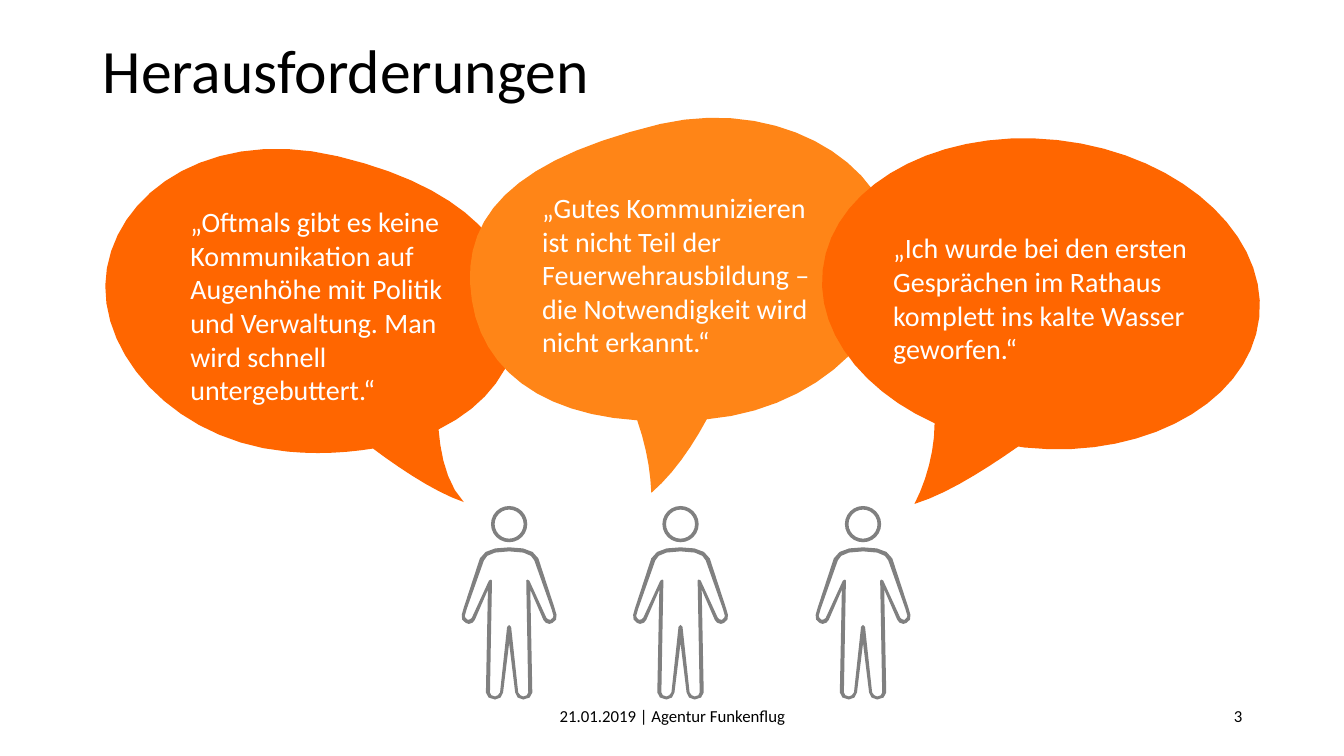
import math

import pptx
import pptx.dml.color
import pptx.enum.shapes
import pptx.enum.text
import pptx.util

Inches = pptx.util.Inches
ALIGN = pptx.enum.text.PP_ALIGN
ANCHOR = pptx.enum.text.MSO_ANCHOR

deck = pptx.Presentation()
deck.slide_width, deck.slide_height = Inches(13.33), Inches(7.5)
slide = deck.slides.add_slide(deck.slide_layouts[6])
shapes = slide.shapes
color = pptx.dml.color.RGBColor.from_string


def trace(start, *parts):
    """Points along lines (x, y) and cubic curves (two controls, then end)."""
    points = [start]
    for part in parts:
        if len(part) == 2:
            points.append(part)
            continue
        nodes = points[-1] + part
        steps = 2 + int(5 * math.dist(nodes[:2], nodes[-2:]))
        for step in range(1, steps + 1):
            t = step / steps
            u = 1 - t
            mix = (u**3, 3 * u * u * t, 3 * u * t * t, t**3)
            points.append(tuple(sum(m * n for m, n in zip(mix, nodes[axis::2]))
                                for axis in (0, 1)))
    return points


def write(text, left, top, width, height, size, fill, align=ALIGN.LEFT, anchor=ANCHOR.TOP):
    box = shapes.add_textbox(Inches(left), Inches(top), Inches(width), Inches(height))
    frame = box.text_frame
    frame.word_wrap = True
    frame.vertical_anchor = anchor
    line = frame.paragraphs[0]
    line.text = text
    line.alignment = align
    line.font.name = "Calibri"
    line.font.size = pptx.util.Pt(size)
    line.font.color.rgb = color(fill)
    return line


left = trace(
    (4.35, 4.26), (4.84, 4.02, 5.11, 3.64, 5.14, 3.2),
    (5.17, 2.49, 4.65, 1.86, 3.35, 1.55), (2.14, 1.26, 1.2, 1.86, 1.06, 2.66),
    (0.92, 3.47, 1.72, 4.38, 2.85, 4.48), (3.16, 4.51, 3.45, 4.49, 3.7, 4.45),
    (3.98, 4.66, 4.33, 4.89, 4.6, 4.98), (4.43, 4.8, 4.37, 4.51, 4.35, 4.26))
middle = trace(
    (4.68, 2.98), (4.55, 2.17, 5.06, 1.59, 6.55, 1.23),
    (7.68, 0.97, 8.73, 1.56, 8.86, 2.37), (8.99, 3.18, 8.17, 4.06, 7.01, 4.16),
    (6.86, 4.44, 6.67, 4.71, 6.46, 4.89), (6.45, 4.66, 6.41, 4.43, 6.32, 4.17),
    (5.35, 4.11, 4.78, 3.65, 4.68, 2.98))
right = trace(
    (10.49, 1.39), (9.3, 1.26, 8.25, 1.84, 8.16, 2.68),
    (8.09, 3.29, 8.56, 3.88, 9.27, 4.2), (9.27, 4.47, 9.19, 4.77, 9.07, 5),
    (9.4, 4.9, 9.8, 4.64, 10.1, 4.43), (10.16, 4.44),
    (11.35, 4.57, 12.4, 3.99, 12.49, 3.15), (12.58, 2.31, 11.68, 1.52, 10.49, 1.39))

# Right half of the body, measured from its middle axis
outer = trace(
    (0, 6.38), (0.06, 6.87), (0.06, 6.91, 0.1, 6.94, 0.14, 6.94),
    (0.19, 6.94, 0.23, 6.91, 0.23, 6.87), (0.21, 5.85),
    (0.34, 6.15), (0.35, 6.17, 0.37, 6.19, 0.4, 6.19), (0.43, 6.18),
    (0.46, 6.17, 0.48, 6.13, 0.47, 6.1), (0.45, 6.03), (0.29, 5.54),
    (0.25, 5.46, 0.16, 5.43, 0, 5.43))
inner = trace(
    (0, 6.2), (0.02, 6.22), (0.09, 6.87),
    (0.1, 6.89, 0.12, 6.91, 0.14, 6.91), (0.17, 6.91, 0.19, 6.89, 0.19, 6.87),
    (0.18, 6.32), (0.17, 5.76), (0.18, 5.75), (0.2, 5.76), (0.37, 6.13),
    (0.38, 6.14, 0.39, 6.15, 0.41, 6.15), (0.43, 6.14, 0.44, 6.12, 0.44, 6.11),
    (0.42, 6.04), (0.25, 5.56), (0.23, 5.51, 0.18, 5.47, 0, 5.47))
body = [half + [(-x, y) for x, y in reversed(half[1:-1])] for half in (outer, inner)]

# Speech bubbles, bodies and heads
figures = [([left], "FF6600"), ([middle], "FF8517"), ([right], "FF6600")]
drawn = []
for axis in (5.05, 6.75, 8.56):
    figures.append(([[(axis + x, y) for x, y in loop] for loop in body], "808080"))
    head = shapes.add_shape(pptx.enum.shapes.MSO_SHAPE.DONUT, Inches(axis - 0.18),
                            Inches(5.02), Inches(0.36), Inches(0.36))
    head.adjustments[0] = 0.1
    drawn.append((head, "808080"))

for loops, fill in figures:
    pen = None
    for loop in loops:
        first, *rest = [(Inches(x), Inches(y)) for x, y in loop]
        if pen is None:
            pen = shapes.build_freeform(*first)
        else:
            pen.move_to(*first)
        pen.add_line_segments(rest, close=True)
    drawn.append((pen.convert_to_shape(), fill))

for shape, fill in drawn:
    shape.shadow.inherit = False
    shape.fill.solid()
    shape.fill.fore_color.rgb = color(fill)
    shape.line.fill.background()

quotes = [
    ("„Oftmals gibt es keine Kommunikation auf Augenhöhe mit Politik und Verwaltung. "
     "Man wird schnell untergebuttert.“", 1.79, 1.98, 3.02, 2.12),
    ("„Gutes Kommunizieren ist nicht Teil der Feuerwehrausbildung – "
     "die Notwendigkeit wird nicht erkannt.“", 5.28, 1.84, 3.04, 1.78),
    ("„Ich wurde bei den ersten Gesprächen im Rathaus komplett ins kalte Wasser "
     "geworfen.“", 8.76, 2.24, 3.52, 1.45),
]
for quote in quotes:
    write(*quote, 20, "FFFFFF")

title = write("Herausforderungen", 0.92, 0, 11.5, 1.45, 44, "000000", anchor=ANCHOR.MIDDLE)
title.line_spacing = 0.9
write("21.01.2019 | Agentur Funkenflug", 4.42, 6.95, 4.5, 0.4, 12, "000000", ALIGN.CENTER)
write("3", 9.42, 6.95, 3, 0.4, 12, "000000", ALIGN.RIGHT)

deck.save("out.pptx")
